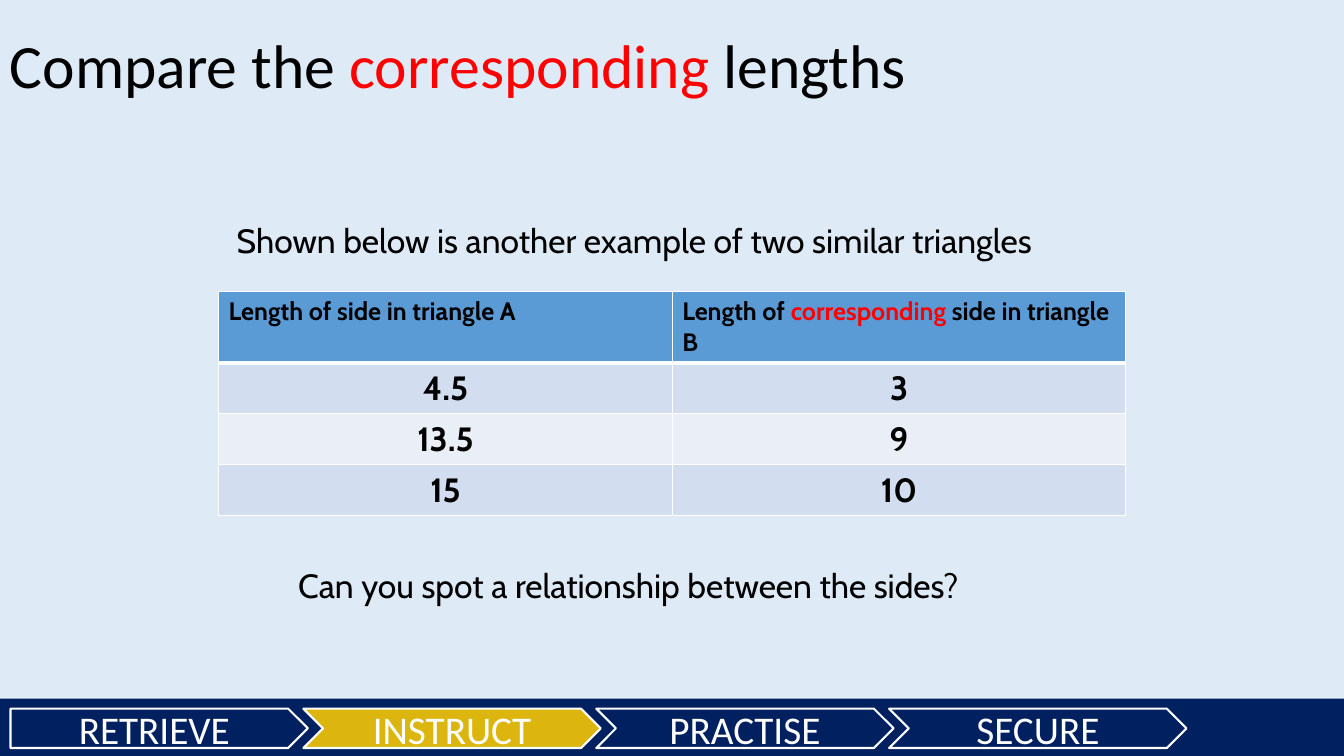
from lxml import etree
from pptx import Presentation
from pptx import util as u
from pptx.dml.color import RGBColor
from pptx.enum import shapes, text
from pptx.oxml import ns

Pt = u.Pt
NAVY = RGBColor(0x00, 0x20, 0x60)
GOLD = RGBColor(0xDC, 0xB5, 0x0E)
WHITE = RGBColor(0xFF, 0xFF, 0xFF)
BLACK = RGBColor(0x00, 0x00, 0x00)
RED = RGBColor(0xFF, 0x00, 0x00)
SKY = RGBColor(0xDE, 0xEB, 0xF7)
BLUE = RGBColor(0x5B, 0x9B, 0xD5)
BANDS = (RGBColor(0xD2, 0xDE, 0xEF), RGBColor(0xEA, 0xEF, 0xF7))
LEFT, MID = text.PP_ALIGN.LEFT, text.PP_ALIGN.CENTER
SHAPE = shapes.MSO_SHAPE


def write(frame, words, size, font="Cabin", color=BLACK, bold=False,
          align=LEFT, space=None):
    """Fill a frame; the part of the words between asterisks turns red."""
    par = frame.paragraphs[0]
    par.alignment = align
    if space:
        par.line_spacing = space
    for i, part in enumerate(words.split("*")):
        run = par.add_run()
        run.text = part
        run.font.name, run.font.size, run.font.bold = font, Pt(size), bold
        run.font.color.rgb = RED if i % 2 else color


class Deck:
    def __init__(self):
        self.prs = Presentation()
        self.prs.slide_width, self.prs.slide_height = Pt(960), Pt(540)
        self.slide = self.prs.slides.add_slide(self.prs.slide_layouts[6])
        back = self.slide.background.fill
        back.solid()
        back.fore_color.rgb = SKY

    def block(self, kind, x, y, w, h, fill, label=None):
        item = self.slide.shapes.add_shape(kind, Pt(x), Pt(y), Pt(w), Pt(h))
        item.shadow.inherit = False
        item.fill.solid()
        item.fill.fore_color.rgb = fill
        if label is None:
            item.line.fill.background()
            return
        item.line.color.rgb = WHITE
        item.line.width = Pt(1.5)
        item.text_frame.vertical_anchor = text.MSO_ANCHOR.MIDDLE
        write(item.text_frame, label, 28, "Calibri", WHITE, align=MID)

    def note(self, x, y, w, h, words, size, **form):
        box = self.slide.shapes.add_textbox(Pt(x), Pt(y), Pt(w), Pt(h))
        box.text_frame.word_wrap = True
        write(box.text_frame, words, size, **form)

    def edge(self, cell, base):
        props = cell._tc.get_or_add_tcPr()
        for i, side in enumerate(("lnL", "lnR", "lnT", "lnB")):
            width = base if side == "lnB" else 1
            line = etree.Element(ns.qn("a:" + side), w=str(Pt(width)))
            fill = etree.SubElement(line, ns.qn("a:solidFill"))
            etree.SubElement(fill, ns.qn("a:srgbClr"), val=str(WHITE))
            props.insert(i, line)

    def table(self, x, y, w, rows, highs):
        grid = self.slide.shapes.add_table(
            len(rows), len(rows[0]), Pt(x), Pt(y), Pt(w), Pt(sum(highs))).table
        for r, row in enumerate(rows):
            head = r == 0
            grid.rows[r].height = Pt(highs[r])
            for c, words in enumerate(row):
                cell = grid.cell(r, c)
                cell.fill.solid()
                cell.fill.fore_color.rgb = BLUE if head else BANDS[(r - 1) % 2]
                self.edge(cell, 3 if r == 0 else 1)
                write(cell.text_frame, words, 18 if head else 24, bold=True,
                      align=LEFT if head else MID)


def main():
    deck = Deck()

    # Footer bar with the lesson stages
    deck.block(SHAPE.RECTANGLE, 0, 499, 960, 41, NAVY)
    stages = ("RETRIEVE", "INSTRUCT", "PRACTISE", "SECURE")
    for i, stage in enumerate(stages):
        deck.block(SHAPE.CHEVRON if i else SHAPE.PENTAGON,
                   7.5 + 209.2 * i, 506.2, 212.4, 28.1,
                   GOLD if stage == "INSTRUCT" else NAVY, stage)

    # Title
    deck.note(0, 21.6, 864, 90, "Compare the *corresponding* lengths", 44,
              font="Calibri", space=0.9)

    # Side lengths
    rows = (("Length of side in triangle A",
             "Length of *corresponding* side in triangle B"),
            ("4.5", "3"), ("13.5", "9"), ("15", "10"))
    deck.table(156.2, 208.1, 648, rows, (51, 36.4, 36.4, 36.4))

    # Lead-in and question
    deck.note(162, 153.4, 630.7, 36, "Shown below is another example of two "
              "similar triangles", 24)
    deck.note(205.9, 400.3, 524.9, 36, "Can you spot a relationship between "
              "the sides?", 24)

    deck.prs.save("out.pptx")


if __name__ == "__main__":
    main()
